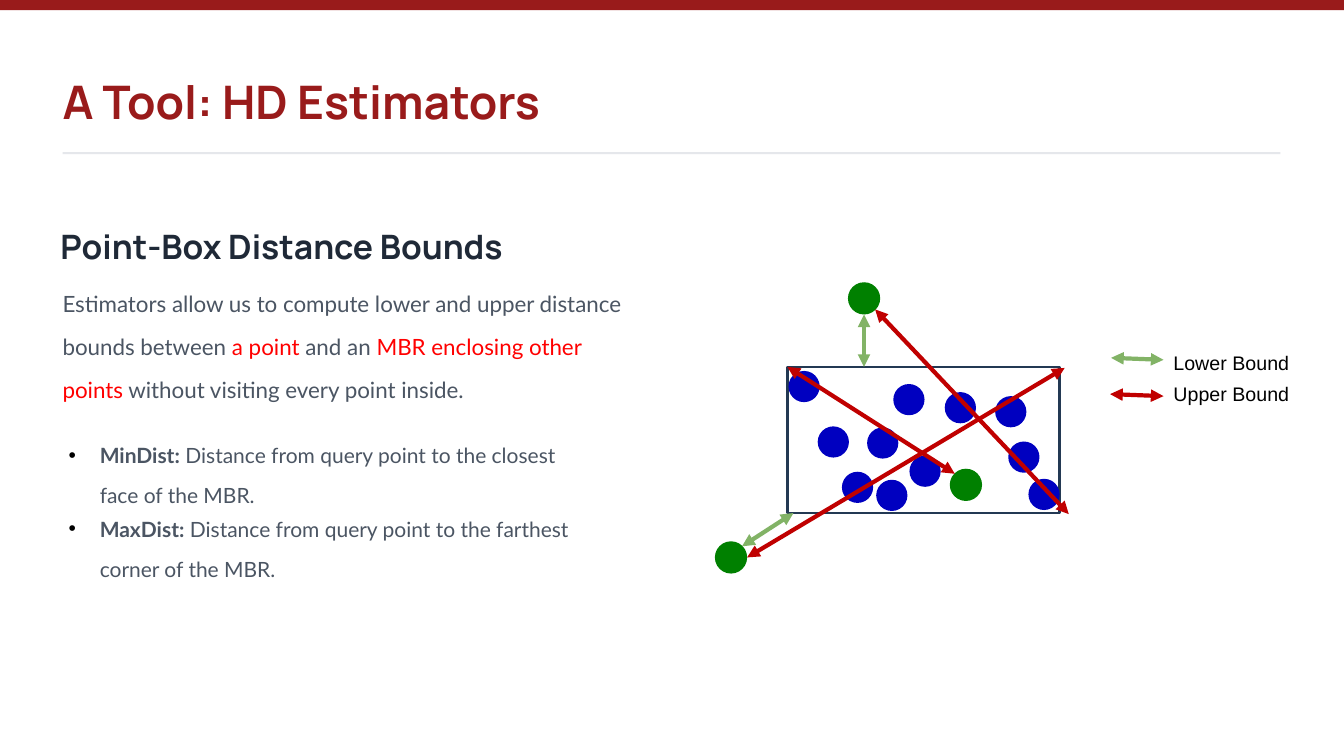
from dataclasses import dataclass

from lxml import etree
from pptx import Presentation
from pptx.dml.color import RGBColor
from pptx.enum.shapes import MSO_CONNECTOR, MSO_SHAPE
from pptx.enum.text import MSO_ANCHOR, MSO_AUTO_SIZE, PP_ALIGN
from pptx.oxml.ns import qn
from pptx.util import Inches, Pt

RECTANGLE, OVAL = MSO_SHAPE.RECTANGLE, MSO_SHAPE.OVAL
STRAIGHT = MSO_CONNECTOR.STRAIGHT
TOP, LEFT, NO_RESIZE = MSO_ANCHOR.TOP, PP_ALIGN.LEFT, MSO_AUTO_SIZE.NONE

CRIMSON = RGBColor(0x99, 0x1B, 0x1B)
RULE_GRAY = RGBColor(0xE5, 0xE7, 0xEB)
HEADING = RGBColor(0x1F, 0x29, 0x37)
BODY_GRAY = RGBColor(0x4B, 0x55, 0x63)
HIGHLIGHT = RGBColor(0xFF, 0x00, 0x00)
BLACK = RGBColor(0x00, 0x00, 0x00)
BOX_NAVY = RGBColor(0x23, 0x39, 0x53)
QUERY_GREEN = RGBColor(0x00, 0x80, 0x00)
POINT_BLUE = RGBColor(0x00, 0x00, 0xC0)
LOWER_GREEN = RGBColor(0x82, 0xB3, 0x66)
UPPER_RED = RGBColor(0xC0, 0x00, 0x00)

# The grid has ten columns and ten rows to the inch
CELL = Inches(0.1)
COLUMNS, ROWS = 133.3, 75
MARGIN = 6.2
LINE_SPACING = 1.6


@dataclass
class Area:
    column: float
    row: float
    width: float
    height: float

    def lengths(self) -> list[int]:
        return [round(n * CELL) for n in (self.column, self.row, self.width, self.height)]


@dataclass
class Span:
    text: str
    color: RGBColor = BODY_GRAY
    bold: bool = False


@dataclass
class Bound:
    start: tuple[float, float]
    end: tuple[float, float]
    color: RGBColor


@dataclass
class Legend:
    label: str
    row: float


@dataclass
class Bullet:
    placeholder: int
    row: float
    term: str
    meaning: str


BULLETS = [
    Bullet(1, 42.4, "MinDist:", " Distance from query point to the closest face of the MBR."),
    Bullet(2, 49.7, "MaxDist:", " Distance from query point to the farthest corner of the MBR."),
]
LEGENDS = [Legend("Lower Bound", 34.3), Legend("Upper Bound", 37.4)]
QUERY_POINTS = [(70.9, 53.7), (94.2, 46.5), (84.1, 28)]
BOX_POINTS = [
    (78.2, 36.8), (93.7, 38.9), (102, 47.5), (90.2, 45.2), (81.1, 42.3), (83.5, 46.8),
    (86, 42.4), (88.6, 38.1), (100, 43.8), (98.7, 39.3), (86.9, 47.6),
]
LOWER_BOUNDS = [
    Bound((73.6, 54.2), (78.7, 50.9), LOWER_GREEN),
    Bound((85.7, 36.4), (85.7, 31.2), LOWER_GREEN),
    Bound((115.4, 35.7), (110.2, 35.5), LOWER_GREEN),
]
UPPER_BOUNDS = [
    Bound((115.4, 39.3), (110.1, 39.1), UPPER_RED),
    Bound((74.1, 55.3), (105.6, 36.5), UPPER_RED),
    Bound((94.7, 47), (78.1, 36.4), UPPER_RED),
    Bound((106, 51), (86.8, 30.7), UPPER_RED),
]


def add_filled(page, kind, area: Area, color: RGBColor) -> None:
    shape = page.shapes.add_shape(kind, *area.lengths())
    shape.shadow.inherit = False
    shape.fill.solid()
    shape.fill.fore_color.rgb = color
    shape.line.fill.background()


def add_bound(page, bound: Bound) -> None:
    ends = [round(n * CELL) for n in (*bound.start, *bound.end)]
    arrow = page.shapes.add_connector(STRAIGHT, *ends)
    arrow.line.color.rgb = bound.color
    arrow.line.width = Pt(3)
    line = arrow.line._get_or_add_ln()
    for tag in ("a:headEnd", "a:tailEnd"):
        etree.SubElement(line, qn(tag), type="triangle")
    etree.SubElement(arrow._element.spPr, qn("a:effectLst"))


def place(box, area: Area, inset: float = 0):
    """Position a text shape and return its first paragraph."""
    box.left, box.top, box.width, box.height = area.lengths()
    frame = box.text_frame
    frame.margin_left = round(inset * CELL)
    frame.margin_right = frame.margin_top = frame.margin_bottom = 0
    frame.word_wrap = True
    frame.auto_size = NO_RESIZE
    frame.vertical_anchor = TOP
    para = frame.paragraphs[0]
    para.alignment = LEFT
    return para


def add_text_box(page, area: Area):
    return page.shapes.add_textbox(*area.lengths())


def add_bullet_mark(para) -> None:
    properties = para._p.get_or_add_pPr()
    indent = round(3.1 * CELL)
    properties.set("marL", str(indent))
    properties.set("indent", str(-indent))
    mark_color = etree.SubElement(properties, qn("a:buClr"))
    etree.SubElement(mark_color, qn("a:srgbClr"), val=str(BLACK))
    etree.SubElement(properties, qn("a:buFont"), typeface="Arial")
    etree.SubElement(properties, qn("a:buChar"), char="•")


def write(para, spans: list[Span], font: str, size: float) -> None:
    para.font.name = font
    para.font.size = Pt(size)
    para.font.color.rgb = spans[0].color
    para.font.bold = spans[0].bold
    for span in spans:
        run = para.add_run()
        run.text = span.text
        if span.color != spans[0].color:
            run.font.color.rgb = span.color
        if span.bold != spans[0].bold:
            run.font.bold = span.bold


def build() -> None:
    deck = Presentation()
    deck.slide_width, deck.slide_height = round(COLUMNS * CELL), ROWS * CELL
    page = deck.slides.add_slide(deck.slide_layouts.get_by_name("Two Content"))

    # Header band, title and rule
    add_filled(page, RECTANGLE, Area(0, 0, COLUMNS, 1), CRIMSON)
    title = place(page.shapes.title, Area(MARGIN, 7.3, 126.9, 5.6))
    write(title, [Span("A Tool: HD Estimators", CRIMSON, True)], "Manrope", 33)
    add_filled(page, RECTANGLE, Area(MARGIN, 15.1, 120.8, 0.2), RULE_GRAY)

    # Heading and introduction
    heading_area = Area(6, 22.4, 70, 4)
    heading = place(add_text_box(page, heading_area), heading_area)
    write(heading, [Span("Point-Box Distance Bounds", HEADING, True)], "Manrope", 24)
    intro_area = Area(MARGIN, 27.2, 57.8, 12.9)
    intro = place(add_text_box(page, intro_area), intro_area)
    intro.line_spacing = LINE_SPACING
    write(intro, [
        Span("Estimators allow us to compute lower and upper distance bounds between "),
        Span("a point ", HIGHLIGHT),
        Span("and an "),
        Span("MBR enclosing other points", HIGHLIGHT),
        Span(" without visiting every point inside."),
    ], "Lato", 16)

    # Definitions
    for bullet in BULLETS:
        body = page.placeholders[bullet.placeholder]
        para = place(body, Area(5.6, bullet.row, 53.6, 8.1), inset=1.2)
        para.line_spacing = LINE_SPACING
        para.space_before = Pt(0)
        add_bullet_mark(para)
        write(para, [Span(bullet.term, bold=True), Span(bullet.meaning)], "Lato", 15)

    # Bounding box with its points and distance bounds
    mbr = page.shapes.add_shape(RECTANGLE, *Area(78.1, 36.4, 27, 14.5).lengths())
    mbr.shadow.inherit = False
    mbr.fill.background()
    mbr.line.color.rgb = BOX_NAVY
    mbr.line.width = Pt(2)
    for points, size, color in ((QUERY_POINTS, 3.2, QUERY_GREEN), (BOX_POINTS, 3.1, POINT_BLUE)):
        for column, row in points:
            add_filled(page, OVAL, Area(column, row, size, size), color)
    for bound in LOWER_BOUNDS + UPPER_BOUNDS:
        add_bound(page, bound)

    # Legend labels
    for legend in LEGENDS:
        label = add_text_box(page, Area(115.4, legend.row, 13.6, 3.4))
        label.text_frame.word_wrap = False
        write(label.text_frame.paragraphs[0], [Span(legend.label, BLACK)], "Arial", 14)

    deck.save("out.pptx")


if __name__ == "__main__":
    build()
